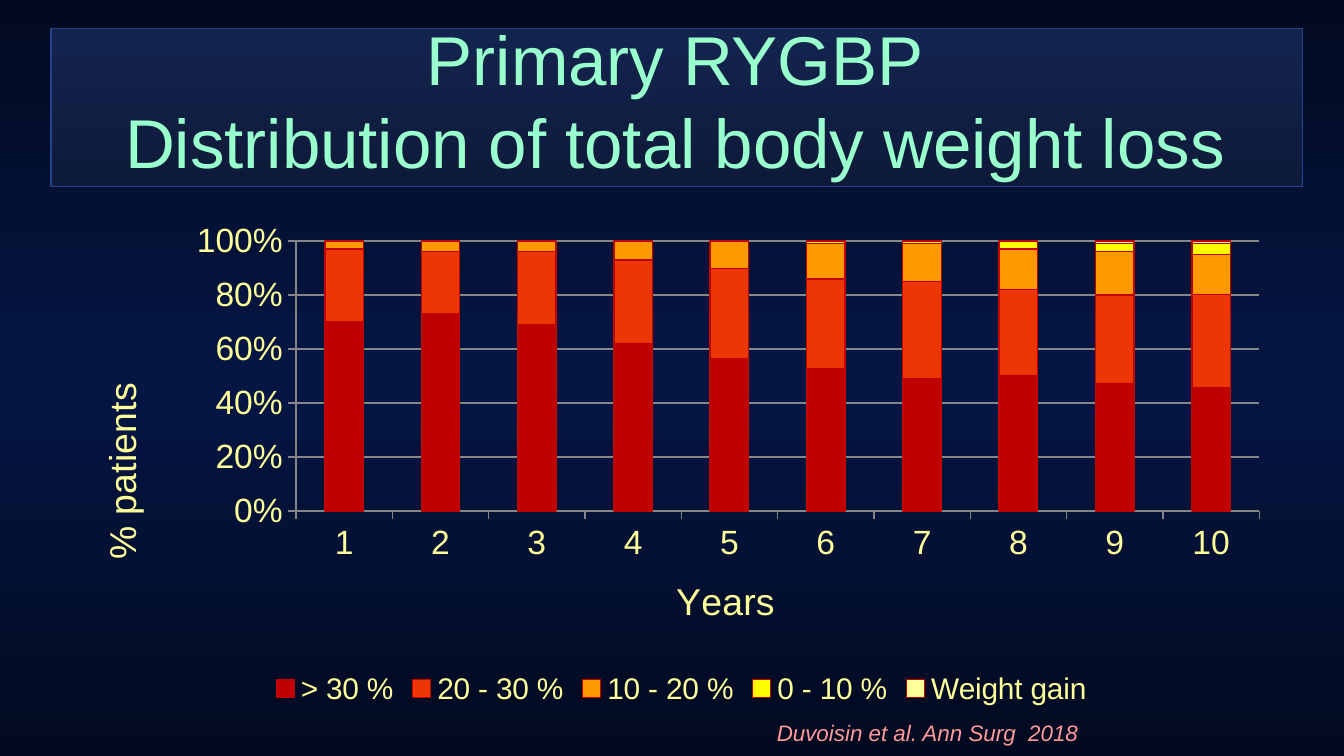
import copy
import pptx
import pptx.chart.data
import pptx.dml.color
import pptx.enum.chart
import pptx.enum.shapes
import pptx.enum.text
import pptx.oxml
import pptx.oxml.ns
import pptx.util

Inches = pptx.util.Inches
Pt = pptx.util.Pt
qn = pptx.oxml.ns.qn

HUES = {
    "night": "020A20", "navy": "051645", "top": "13244F", "base": "0E1A39",
    "edge": "234291", "mint": "99FFCC", "cream": "FFFF99", "rose": "FF9999",
    "grid": "868686", "red": "C00000", "flame": "EE3604", "amber": "FF9900",
    "lemon": "FFFF00",
}
BANDS = [
    ("> 30 %", "red", (70, 73, 69, 62, 56, 52, 49, 50, 47, 46)),
    ("20 - 30 %", "flame", (27, 23, 27, 31, 33, 33, 36, 32, 33, 35)),
    ("10 - 20 %", "amber", (3, 4, 4, 7, 10, 13, 14, 15, 16, 15)),
    ("0 - 10 %", "lemon", (0, 0, 0, 0, 0, 1, 1, 3, 3, 4)),
    ("Weight gain", "cream", (0, 0, 0, 0, 0, 0, 0, 0, 1, 1)),
]


def hue(name):
    return pptx.dml.color.RGBColor.from_string(HUES[name])


def assign(item, **values):
    for key, value in values.items():
        setattr(item, key, value)


def style(font, size, color, italic=False):
    assign(font, size=Pt(size), name="Arial", bold=False, italic=italic)
    font.color.rgb = hue(color)


def stroke(line, color):
    line.color.rgb = hue(color)
    line.width = Pt(0.75)


def shade(fill, root, names):
    fill.gradient()
    fill.gradient_angle = 270
    stops = root.find(".//" + qn("a:gsLst"))
    while len(stops) < len(names):
        stops.append(copy.deepcopy(stops[-1]))
    for i, (stop, name) in enumerate(zip(fill.gradient_stops, names)):
        stop.color.rgb = hue(name)
        stop.position = i / (len(names) - 1)


def inset(frame, **values):
    assign(frame, margin_left=Inches(0.08), margin_right=Inches(0.08),
           margin_top=Inches(0.04), margin_bottom=Inches(0.04), **values)


def place(node, index, **spots):
    old = node.find(qn("c:layout"))
    if old is not None:
        node.remove(old)
    tags = "".join(f'<c:{key} val="{value}"/>' for key, value in spots.items())
    node.insert(index, pptx.oxml.parse_xml(
        f'<c:layout {pptx.oxml.ns.nsdecls("c")}>'
        f"<c:manualLayout>{tags}</c:manualLayout></c:layout>"))


def header(slide, x, y, w, h):
    panel = slide.shapes.add_shape(
        pptx.enum.shapes.MSO_SHAPE.RECTANGLE,
        Inches(x), Inches(y), Inches(w), Inches(h))
    panel.shadow.inherit = False
    shade(panel.fill, panel._element, ["top", "base"])
    stroke(panel.line, "edge")
    title = slide.shapes.title
    assign(title, left=Inches(x + 0.14), top=Inches(y + 0.06),
           width=Inches(w - 0.3), height=Inches(h - 0.24))
    panel._element.addnext(title._element)
    frame = title.text_frame
    inset(frame, word_wrap=True,
          auto_size=pptx.enum.text.MSO_AUTO_SIZE.NONE,
          vertical_anchor=pptx.enum.text.MSO_ANCHOR.MIDDLE)
    frame.text = "Primary RYGBP\vDistribution of total body weight loss"
    para = frame.paragraphs[0]
    assign(para, alignment=pptx.enum.text.PP_ALIGN.CENTER, line_spacing=1.0)
    for run in para.runs:
        style(run.font, 37, "mint")


def label(axis, text, x, y):
    frame = axis.axis_title.text_frame
    frame.text = text
    style(frame.paragraphs[0].runs[0].font, 20, "cream")
    place(axis.axis_title._element, 1, xMode="edge", yMode="edge", x=x, y=y)
    style(axis.tick_labels.font, 18, "cream")
    stroke(axis.format.line, "grid")
    axis.major_tick_mark = pptx.enum.chart.XL_TICK_MARK.OUTSIDE


def graph(slide, x, y, w, h):
    data = pptx.chart.data.CategoryChartData()
    data.categories = [str(year) for year in range(1, 11)]
    for name, _, values in BANDS:
        data.add_series(name, values)
    chart = slide.shapes.add_chart(
        pptx.enum.chart.XL_CHART_TYPE.COLUMN_STACKED_100,
        Inches(x), Inches(y), Inches(w), Inches(h), data).chart
    chart.has_title = False
    style(chart.font, 10, "cream")
    plot = chart.plots[0]
    assign(plot, gap_width=150, overlap=100, vary_by_categories=False)
    for series, (_, color, _) in zip(plot.series, BANDS):
        series.format.fill.solid()
        series.format.fill.fore_color.rgb = hue(color)
        stroke(series.format.line, "red")
    label(chart.category_axis, "Years", 0.49, 0.72)
    axis = chart.value_axis
    label(axis, "% patients", 0.01, 0.33)
    assign(axis, minimum_scale=0, maximum_scale=1, major_unit=0.2,
           has_major_gridlines=True)
    stroke(axis.major_gridlines.format.line, "grid")
    assign(axis.tick_labels, number_format="0%", number_format_is_linked=False)
    area = chart._chartSpace.find(".//" + qn("c:plotArea"))
    place(area, 0, layoutTarget="inner", xMode="edge", yMode="edge",
          x=0.18, y=0.06, w=0.8, h=0.54)
    chart.has_legend = True
    assign(chart.legend, include_in_layout=False,
           position=pptx.enum.chart.XL_LEGEND_POSITION.BOTTOM)
    style(chart.legend.font, 16, "cream")


def source(slide, x, y, w, h):
    box = slide.shapes.add_textbox(Inches(x), Inches(y), Inches(w), Inches(h))
    inset(box.text_frame, word_wrap=True,
          auto_size=pptx.enum.text.MSO_AUTO_SIZE.SHAPE_TO_FIT_TEXT)
    run = box.text_frame.paragraphs[0].add_run()
    run.text = "Duvoisin et al. Ann Surg  2018"
    style(run.font, 12, "rose", italic=True)


def main():
    deck = pptx.Presentation()
    wide = Inches(10)
    assign(deck, slide_width=wide, slide_height=wide * 9 // 16)
    slide = deck.slides.add_slide(deck.slide_layouts[5])
    shade(slide.background.fill, slide._element, ["night", "navy", "night"])
    header(slide, 0.38, 0.21, 9.31, 1.18)
    graph(slide, 0.59, 1.57, 8.96, 3.72)
    source(slide, 5.7, 5.31, 4.83, 0.29)
    deck.save("out.pptx")


if __name__ == "__main__":
    main()
